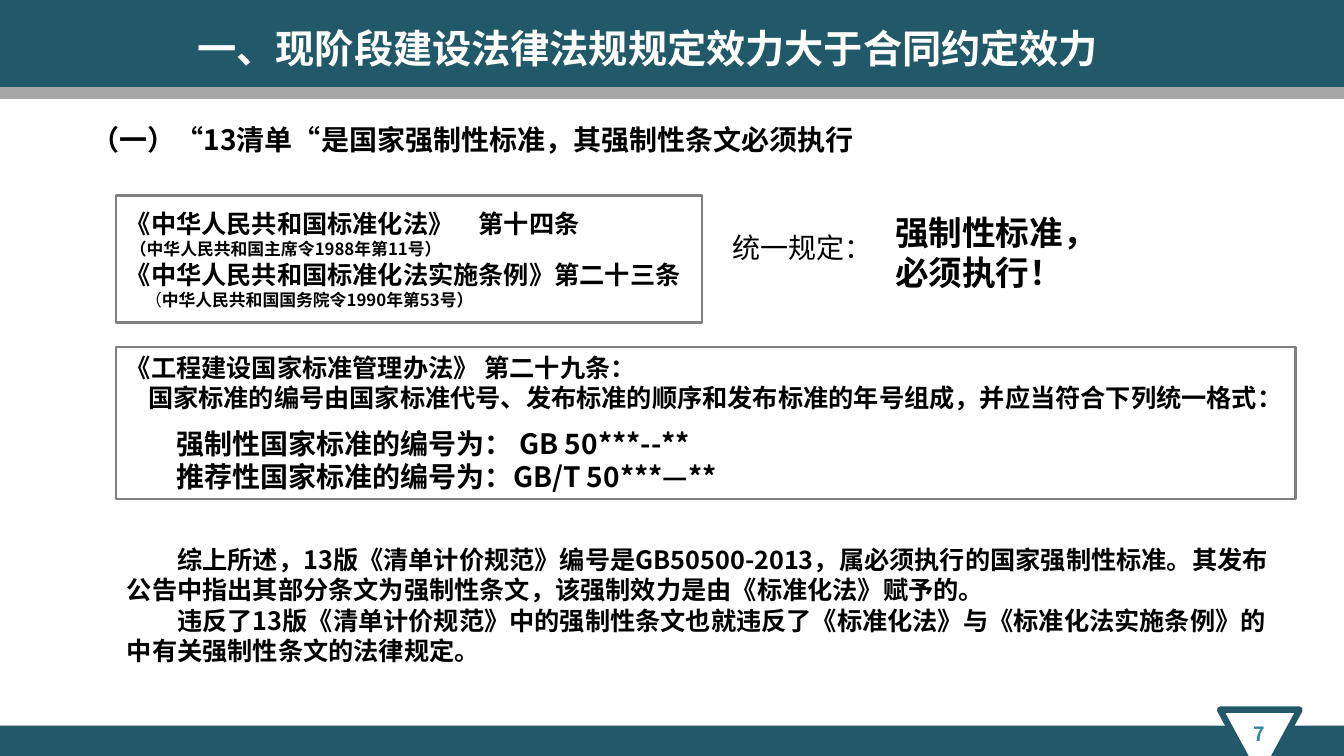
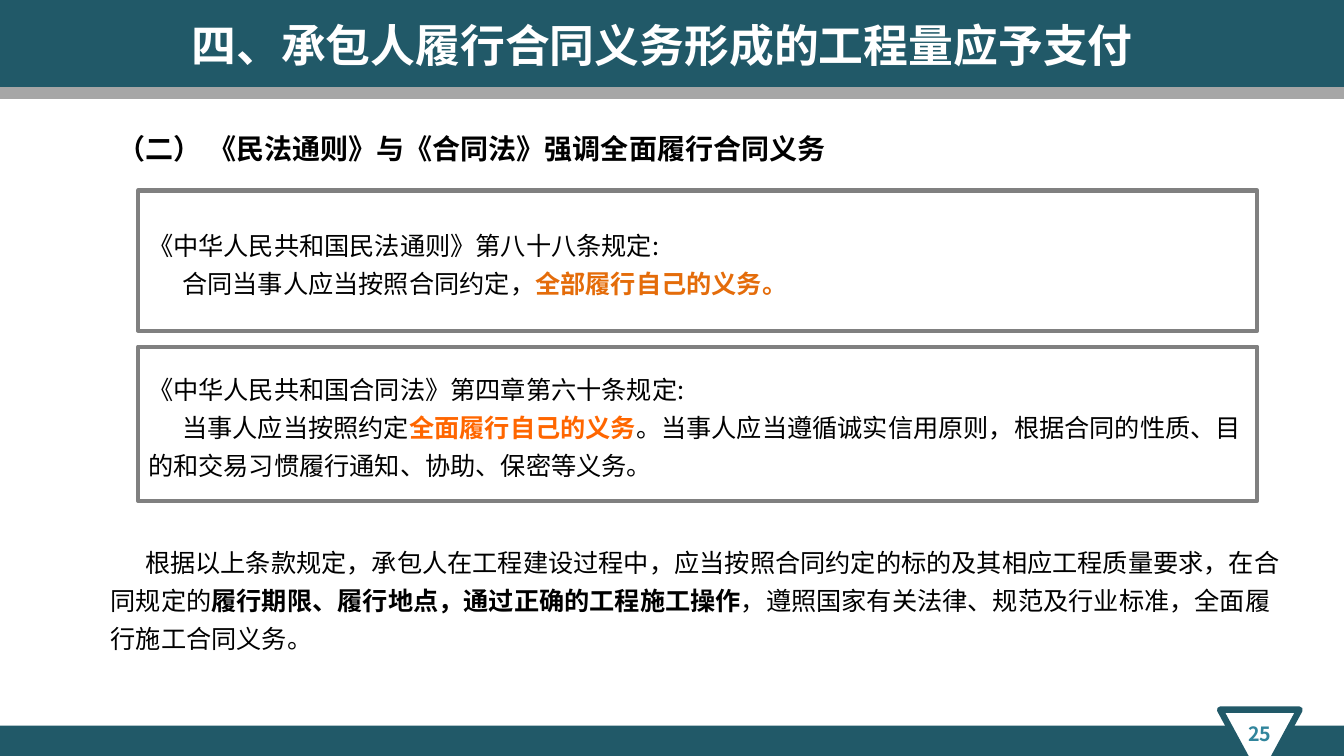
from dataclasses import dataclass, field
from typing import NamedTuple

from lxml.etree import SubElement
from pptx import Presentation
from pptx.dml.color import RGBColor
from pptx.enum.shapes import MSO_CONNECTOR, MSO_SHAPE
from pptx.enum.text import MSO_ANCHOR as Anchor, PP_ALIGN as Align
from pptx.oxml.ns import qn
from pptx.util import Inches, Pt


@dataclass(frozen=True)
class Theme:
    """Colours, font and type sizes of the presentation."""
    font: str = "Noto Sans CJK SC"
    teal: str = "215968"
    page_teal: str = "31859C"
    rule_gray: str = "A6A6A6"
    border_gray: str = "808080"
    white: str = "FFFFFF"
    black: str = "000000"
    orange: str = "E46C0A"
    bright_orange: str = "FF6600"
    large_title: int = 32
    title: int = 28
    callout: int = 24
    heading: int = 20
    body: int = 18
    page: int = 14
    note: int = 12


class Box(NamedTuple):
    """A region of the slide in inches."""
    left: float
    top: float
    width: float
    height: float

    def lengths(self):
        """Return the four lengths for a shape call."""
        return [Inches(value) for value in self]


@dataclass
class Line:
    """A paragraph: (text, overrides) runs and its format values."""
    runs: list
    size: int
    bold: bool = False
    color: str = Theme.black
    indent: float = 0
    tab: float = 0
    layout: dict = field(default_factory=dict)


THEME = Theme()
WIDTH, HEIGHT = 13.33, 7.5
TITLE_BAND = Box(0, 0, WIDTH, 0.89)
FOOTER_BAND = Box(0, 7.2, WIDTH, 0.3)
PAGE_MARK = Box(12.1, 7.04, 0.79, 0.73)
LOOSE = {"line_spacing": 1.25}


def set_all(target, values):
    """Set attributes from a dict of format values."""
    for name, value in values.items():
        setattr(target, name, value)


def write(shape, lines, anchor=Anchor.TOP):
    """Write the lines into the text frame of a shape."""
    frame = shape.text_frame
    set_all(frame, {"word_wrap": True, "vertical_anchor": anchor})
    for number, line in enumerate(lines):
        paragraph = frame.add_paragraph() if number else frame.paragraphs[0]
        set_all(paragraph, {"alignment": Align.LEFT, **line.layout})
        properties = paragraph._p.get_or_add_pPr()
        properties.set("marL", "0")
        properties.set("indent", str(Inches(line.indent)))
        if line.tab:
            stops = SubElement(properties, qn("a:tabLst"))
            SubElement(stops, qn("a:tab"), pos=str(Inches(line.tab)), algn="l")
        for text, changes in line.runs:
            style = {"size": line.size, "bold": line.bold, "color": line.color, **changes}
            run = paragraph.add_run()
            run.text = text
            set_all(run.font, {"name": THEME.font, "size": Pt(style["size"]),
                               "bold": style["bold"]})
            run.font.color.rgb = RGBColor.from_string(style["color"])
            SubElement(run._r.get_or_add_rPr(), qn("a:ea"), typeface=THEME.font)


def add_text(slide, box, lines, anchor=Anchor.TOP):
    """Place a text box."""
    write(slide.shapes.add_textbox(*box.lengths()), lines, anchor)


def add_block(slide, box, kind=MSO_SHAPE.RECTANGLE, fill=None, line=None, weight=0):
    """Place a preset shape with an optional fill and outline."""
    shape = slide.shapes.add_shape(kind, *box.lengths())
    shape.shadow.inherit = False
    for part, color in ((shape.fill, fill), (shape.line.fill, line)):
        if color:
            part.solid()
            part.fore_color.rgb = RGBColor.from_string(color)
        else:
            part.background()
    if line:
        shape.line.width = Pt(weight)
    return shape


def add_panel(slide, box, lines, weight):
    """Place an outlined panel of quoted clauses."""
    panel = add_block(slide, box, line=THEME.border_gray, weight=weight)
    write(panel, lines, Anchor.MIDDLE)


def add_rule(slide, band):
    """Draw the gray rule just under a band."""
    level = Inches(band.top + band.height + 0.03)
    rule = slide.shapes.add_connector(MSO_CONNECTOR.STRAIGHT, Inches(band.left + band.width),
                                      level, Inches(band.left), level)
    rule.line.width = Pt(8.75)
    rule.line.color.rgb = RGBColor.from_string(THEME.rule_gray)
    SubElement(rule._element.spPr, qn("a:effectLst"))


def add_page_mark(slide, box, number):
    """Draw the pointed page marker with its number."""
    mark = add_block(slide, box, MSO_SHAPE.ISOSCELES_TRIANGLE, THEME.white, THEME.teal, 4.5)
    mark.rotation = 180
    label = Box(box.left + 0.16, box.top + 0.07, box.width - 0.32, 0.34)
    add_text(slide, label, [Line([(str(number), {})], THEME.page, True, THEME.page_teal,
                                 layout={"alignment": Align.CENTER})])


def add_framed_slide(presentation, number, title, title_box, title_size, title_indent=0):
    """Add a slide with bands, rule, page marker and title."""
    slide = presentation.slides.add_slide(presentation.slide_layouts[6])
    for band in (TITLE_BAND, FOOTER_BAND):
        add_block(slide, band, fill=THEME.teal)
    add_rule(slide, TITLE_BAND)
    add_page_mark(slide, PAGE_MARK, number)
    add_text(slide, title_box, [Line([(title, {})], title_size, True, THEME.white,
                                     title_indent)])
    return slide


def add_heading(slide, box, text):
    """Place the section heading."""
    add_text(slide, box, [Line([(text, {})], THEME.heading, True)])


def add_law_row(slide, box):
    """Place the laws panel and the rule they share."""
    laws = [
        Line([("《中华人民共和国标准化法》\t第十四条", {})], THEME.body, True, tab=4.02),
        Line([("（中华人民共和国主席令1988年第11号）", {})], THEME.note, True, indent=0.04),
        Line([("《中华人民共和国标准化法实施条例》第二十三条", {})], THEME.body, True),
        Line([("（", {"bold": False}), ("中华人民共和国国务院令1990年第53号）", {})],
             THEME.note, True, indent=0.19),
    ]
    add_panel(slide, Box(box.left, box.top, 5.81, box.height), laws, 1.5)
    add_text(slide, Box(box.left + 6.02, box.top + 0.3, 1.6, 0.44),
             [Line([("统一规定：", {})], THEME.heading)])
    add_text(slide, Box(box.left + 7.63, box.top + 0.11, 2.22, 0.91),
             [Line([(text, {})], THEME.callout, True)
              for text in ("强制性标准，", "必须执行！")])


def add_numbering_panel(slide, box):
    """Place the panel on how standards are numbered."""
    lines = [
        Line([("《工程建设国家标准管理办法》 第二十九条：", {})], THEME.body, True),
        Line([("国家标准的编号由国家标准代号、发布标准的顺序和发布标准的年号组成，"
               "并应当符合下列统一格式：", {})], THEME.body, True, indent=0.22),
        Line([("强制性国家标准的编号为： GB 50***--**", {})], THEME.heading, True,
             indent=0.5, layout={"space_before": Pt(9.5)}),
        Line([("推荐性国家标准的编号为：GB/T 50***—**", {})], THEME.heading, True, indent=0.5),
    ]
    add_panel(slide, box, lines, 1.5)


def add_standards_slide(presentation):
    """Build the slide on mandatory standards."""
    slide = add_framed_slide(presentation, 7, "一、现阶段建设法律法规规定效力大于合同约定效力",
                             Box(1.86, 0.19, 9.23, 0.57), THEME.title)
    add_heading(slide, Box(0.81, 1.17, 7.84, 0.44),
                "（一）“13清单“是国家强制性标准，其强制性条文必须执行")
    add_law_row(slide, Box(1.15, 1.94, 11.7, 1.26))
    add_numbering_panel(slide, Box(1.15, 3.44, 11.7, 1.51))
    conclusions = (
        "综上所述，13版《清单计价规范》编号是GB50500-2013，属必须执行的国家强制性标准。"
        "其发布公告中指出其部分条文为强制性条文，该强制效力是由《标准化法》赋予的。",
        "违反了13版《清单计价规范》中的强制性条文也就违反了《标准化法》与"
        "《标准化法实施条例》的中有关强制性条文的法律规定。",
    )
    add_text(slide, Box(1.16, 5.24, 11.69, 1.52),
             [Line([(text, {})], THEME.body, True, indent=0.5) for text in conclusions],
             Anchor.MIDDLE)


def add_clause_panel(slide, box, source, clause):
    """Place a panel with a law's name and its clause."""
    add_panel(slide, box, [Line([(source, {})], THEME.body, layout=LOOSE),
                           Line(clause, THEME.body, indent=0.34, layout=LOOSE)], 3)


def add_duties_slide(presentation):
    """Build the slide on full performance of contract duties."""
    slide = add_framed_slide(presentation, 25, "四、承包人履行合同义务形成的工程量应予支付",
                             Box(1.63, 0.13, 10.24, 0.64), THEME.large_title, 0.17)
    add_heading(slide, Box(1.07, 1.26, 9.43, 0.44),
                "（二） 《民法通则》与《合同法》强调全面履行合同义务")
    add_clause_panel(slide, Box(1.37, 1.89, 11.1, 1.39),
                     "《中华人民共和国民法通则》第八十八条规定:",
                     [("合同当事人应当按照合同约定，", {}),
                      ("全部履行自己的义务。", {"color": THEME.orange, "bold": True})])
    add_clause_panel(slide, Box(1.37, 3.44, 11.1, 1.53),
                     "《中华人民共和国合同法》第四章第六十条规定:",
                     [("当事人应当按照约定", {}),
                      ("全面履行自己的义务", {"color": THEME.bright_orange, "bold": True}),
                      ("。当事人应当遵循诚实信用原则，根据合同的性质、目的和交易习惯"
                       "履行通知、协助、保密等义务。", {})])
    conclusion = [
        ("根据以上条款规定，承包人在工程建设过程中，应当按照合同约定的标的及其相应工程质量要求，"
         "在合同规定的", {}),
        ("履行期限、履行地点，通过正确的工程施工操作", {"bold": True}),
        ("，遵照国家有关法律、规范及行业标准，全面履行施工合同义务。", {}),
    ]
    add_text(slide, Box(1, 5.25, 11.85, 1.34),
             [Line(conclusion, THEME.body, indent=0.34, layout=LOOSE)], Anchor.MIDDLE)


def main():
    """Build and save the presentation."""
    presentation = Presentation()
    set_all(presentation, {"slide_width": Inches(WIDTH), "slide_height": Inches(HEIGHT)})
    add_standards_slide(presentation)
    add_duties_slide(presentation)
    presentation.save("out.pptx")


if __name__ == "__main__":
    main()
